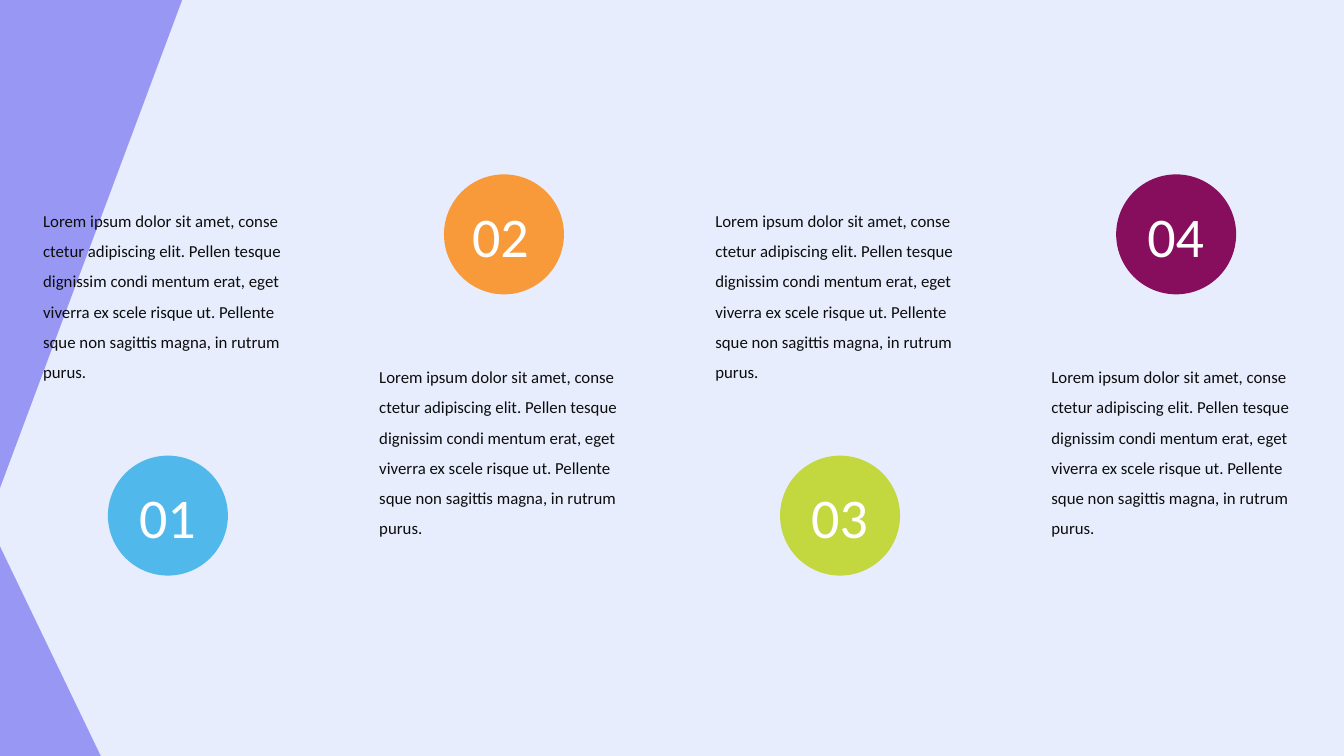
from pptx import Presentation
from pptx.dml.color import RGBColor
from pptx.enum import shapes, text
from pptx.oxml.ns import qn
from pptx.util import Inches, Pt

COLORS = {
    "background": "E7EDFD", "corner": "9898F4", "body": "0D0D0D", "number": "FFFFFF",
    "blue": "51B8EB", "orange": "F89A3A", "lime": "C3D83F", "plum": "870E5D",
}
BODY = ("Lorem ipsum dolor sit amet, conse ctetur adipiscing elit. Pellen tesque "
        "dignissim condi mentum erat, eget viverra ex scele risque ut. Pellente "
        "sque non sagittis magna, in rutrum purus.")
# number, circle colour, sideways shift of the number
STEPS = [("01", "blue", 0), ("02", "orange", -0.03), ("03", "lime", 0), ("04", "plum", 0)]

FONT = "Calibri"
PITCH = 10 / 3
BODY_LEFT, CIRCLE_LEFT = 0.33, 1.07
CIRCLE_SIZE = 1.19
NUMBER_DROP = 0.22
# tops of circle and body text, alternating by column
ROWS = [(4.52, 1.94), (1.73, 3.49)]


def color(name):
    return RGBColor.from_string(COLORS[name])


def add_filled(page, kind, area, fill):
    shape = page.shapes.add_shape(kind, *map(Inches, area))
    shape.shadow.inherit = False
    shape.fill.solid()
    shape.fill.fore_color.rgb = color(fill)
    shape.line.fill.background()
    return shape


def add_text(page, words, area, size, ink, align, spacing):
    box = page.shapes.add_textbox(*map(Inches, area))
    frame = box.text_frame
    frame.word_wrap = True
    frame.auto_size = text.MSO_AUTO_SIZE.SHAPE_TO_FIT_TEXT
    frame.text = words
    para = frame.paragraphs[0]
    para.alignment = align
    para.line_spacing = spacing
    font = para.runs[0].font
    font.name, font.size, font.color.rgb = FONT, Pt(size), color(ink)


def add_corners(page):
    triangle = shapes.MSO_SHAPE.RIGHT_TRIANGLE
    add_filled(page, triangle, (0, 5.42, 1, 2.08), "corner")
    upper = add_filled(page, triangle, (0, -0.01, 1.81, 4.85), "corner")
    upper.rotation = 180
    upper.element.spPr.find(qn("a:xfrm")).set("flipH", "1")


def add_step(page, column, number, fill, shift):
    offset = column * PITCH
    circle_top, body_top = ROWS[column % 2]
    left = CIRCLE_LEFT + offset
    add_filled(page, shapes.MSO_SHAPE.OVAL,
               (left, circle_top, CIRCLE_SIZE, CIRCLE_SIZE), fill)
    add_text(page, BODY, (BODY_LEFT + offset, body_top, 2.66, 1.89),
             12, "body", text.PP_ALIGN.LEFT, 1.5)
    add_text(page, number, (left + shift, circle_top + NUMBER_DROP, 1.18, 0.77),
             40, "number", text.PP_ALIGN.CENTER, 1.0)


def main():
    deck = Presentation()
    deck.slide_width, deck.slide_height = Inches(13.33), Inches(7.5)
    page = deck.slides.add_slide(deck.slide_layouts[6])
    page.background.fill.solid()
    page.background.fill.fore_color.rgb = color("background")
    add_corners(page)
    for column, step in enumerate(STEPS):
        add_step(page, column, *step)
    deck.save("out.pptx")


if __name__ == "__main__":
    main()
